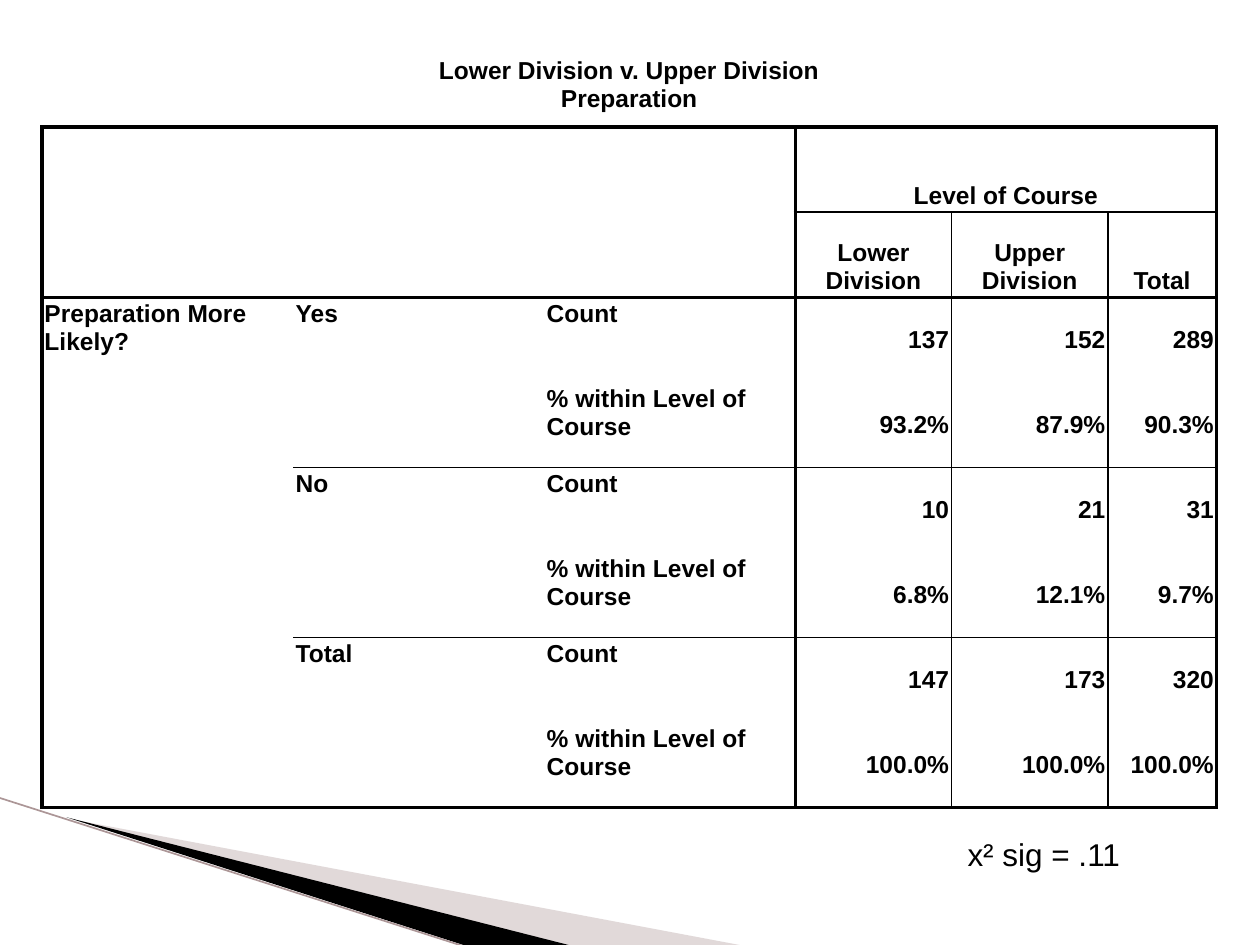
from dataclasses import dataclass

import pptx
import pptx.dml.color
import pptx.enum.shapes
import pptx.enum.text
import pptx.oxml
import pptx.oxml.ns
import pptx.util
from lxml import etree

Pt = pptx.util.Pt
RGBColor = pptx.dml.color.RGBColor
ALIGN = pptx.enum.text.PP_ALIGN
ANCHOR = pptx.enum.text.MSO_ANCHOR
qn = pptx.oxml.ns.qn

BLACK = RGBColor(0x00, 0x00, 0x00)
WHITE = RGBColor(0xFF, 0xFF, 0xFF)
MAUVE = RGBColor(0xB4, 0xA0, 0xA1)
ROSE = RGBColor(0xAC, 0x96, 0x97)

FONT = "Arial"
NO_STYLE_NO_GRID = "{2D5ABB26-0587-4C30-8999-92F81FD0307C}"
COLUMN_WIDTHS = [143.5, 143.5, 143.5, 89.3, 89.3, 62]
ROW_COUNT, ROW_HEIGHT = 9, 48.64
CELL_MARGIN = 1.44
THICK, THIN = 2.25, 1


@dataclass
class Band:
    points: list[tuple[float, float]]
    color: RGBColor
    opacity: int = 100


@dataclass
class Answer:
    label: str
    counts: list[str]
    shares: list[str]


@dataclass
class Entry:
    row: int
    column: int
    text: str
    align: ALIGN = ALIGN.LEFT
    anchor: ANCHOR = ANCHOR.TOP
    row_span: int = 1
    column_span: int = 1


BANDS = [
    Band([(39.6, 468.5), (428.4, 540.7), (328.3, 540.7)], MAUVE, 40),
    Band([(38.2, 467.3), (329, 540.7), (267.8, 541.4)], BLACK),
]
ANSWERS = [
    Answer("Yes", ["137", "152", "289"], ["93.2%", "87.9%", "90.3%"]),
    Answer("No", ["10", "21", "31"], ["6.8%", "12.1%", "9.7%"]),
    Answer("Total", ["147", "173", "320"], ["100.0%", "100.0%", "100.0%"]),
]


def write_text(frame, text, *, size=14, bold=False, align=ALIGN.LEFT, line_spacing=None):
    """Write one paragraph for each line of text."""
    for index, line in enumerate(text.split("\n")):
        paragraph = frame.add_paragraph() if index else frame.paragraphs[0]
        paragraph.alignment = align
        if line_spacing:
            paragraph.line_spacing = Pt(line_spacing)
        run = paragraph.add_run()
        run.text = line
        run.font.name, run.font.size, run.font.bold = FONT, Pt(size), bold
        run.font.color.rgb = BLACK


def draw_band(slide, band: Band) -> None:
    builder = slide.shapes.build_freeform(*band.points[0], scale=float(Pt(1)))
    builder.add_line_segments(band.points[1:], close=True)
    shape = builder.convert_to_shape()
    shape.shadow.inherit = False
    shape.line.fill.background()
    shape.fill.solid()
    shape.fill.fore_color.rgb = band.color
    if band.opacity < 100:
        color = shape.fill._xPr.find(".//" + qn("a:srgbClr"))
        etree.SubElement(color, qn("a:alpha"), val=str(band.opacity * 1000))


def draw_edge_line(slide) -> None:
    edge = slide.shapes.add_connector(
        pptx.enum.shapes.MSO_CONNECTOR.STRAIGHT, Pt(-0.7), Pt(455.8), Pt(267.1), Pt(541.4))
    edge.line.color.rgb = ROSE
    edge.line.width = Pt(0.95)
    etree.SubElement(edge._element.spPr, qn("a:effectLst"))


def rule_above(row: int, column: int) -> float:
    """Weight of the horizontal rule on top of a cell; 0 for none."""
    if row in (1, 3, ROW_COUNT):
        return THICK
    if (row == 2 and column >= 3) or (row in (5, 7) and column >= 1):
        return THIN
    return 0


def rule_before(row: int, column: int) -> float:
    """Weight of the vertical rule left of a cell; 0 for none."""
    if row == 0:
        return 0
    if column in (0, 3, 6):
        return THICK
    return THIN if row >= 2 and column in (4, 5) else 0


def add_borders(cell, row: int, column: int) -> None:
    weights = {
        "L": rule_before(row, column),
        "R": rule_before(row, column + (cell.span_width if cell.is_merge_origin else 1)),
        "T": rule_above(row, column),
        "B": rule_above(row + (cell.span_height if cell.is_merge_origin else 1), column),
    }
    properties = cell._tc.get_or_add_tcPr()
    for side, weight in weights.items():
        border = etree.SubElement(properties, qn(f"a:ln{side}"), w=str(Pt(weight)))
        if weight:
            fill = etree.SubElement(border, qn("a:solidFill"))
            etree.SubElement(fill, qn("a:srgbClr"), val=str(BLACK))
        else:
            etree.SubElement(border, qn("a:noFill"))


def table_entries() -> list[Entry]:
    center, bottom = ALIGN.CENTER, ANCHOR.BOTTOM
    entries = [
        Entry(0, 0, "Lower Division v. Upper Division\nPreparation", center,
              ANCHOR.MIDDLE, column_span=6),
        Entry(1, 3, "Level of Course", center, bottom, column_span=3),
        Entry(3, 0, "Preparation More Likely?", row_span=6),
    ]
    for column, level in enumerate(["Lower Division", "Upper Division", "Total"], start=3):
        entries.append(Entry(2, column, level, center, bottom))
    for index, answer in enumerate(ANSWERS):
        first_row = 3 + 2 * index
        entries.append(Entry(first_row, 1, answer.label, row_span=2))
        measures = [("Count", answer.counts), ("% within Level of Course", answer.shares)]
        for row, (measure, values) in enumerate(measures, start=first_row):
            entries.append(Entry(row, 2, measure))
            for column, value in enumerate(values, start=3):
                entries.append(Entry(row, column, value, ALIGN.RIGHT, ANCHOR.MIDDLE))
    return entries


def draw_crosstab(slide) -> None:
    frame = slide.shapes.add_table(
        ROW_COUNT, len(COLUMN_WIDTHS), Pt(24), Pt(24),
        Pt(sum(COLUMN_WIDTHS)), Pt(ROW_COUNT * ROW_HEIGHT))
    crosstab = frame.table
    crosstab.first_row = crosstab.horz_banding = False
    crosstab._tbl.tblPr.find(qn("a:tableStyleId")).text = NO_STYLE_NO_GRID
    for column, width in zip(crosstab.columns, COLUMN_WIDTHS):
        column.width = Pt(width)
    for row in crosstab.rows:
        row.height = Pt(ROW_HEIGHT)

    # Wording and merged cells
    for entry in table_entries():
        cell = crosstab.cell(entry.row, entry.column)
        if entry.row_span > 1 or entry.column_span > 1:
            cell.merge(crosstab.cell(entry.row + entry.row_span - 1,
                                     entry.column + entry.column_span - 1))
        cell.margin_left = cell.margin_right = Pt(CELL_MARGIN)
        cell.margin_top = cell.margin_bottom = Pt(CELL_MARGIN)
        cell.vertical_anchor = entry.anchor
        write_text(cell.text_frame, entry.text, bold=True, align=entry.align, line_spacing=16)

    # Rules and fills
    for row in range(ROW_COUNT):
        for column in range(len(COLUMN_WIDTHS)):
            cell = crosstab.cell(row, column)
            add_borders(cell, row, column)
            cell.fill.solid()
            cell.fill.fore_color.rgb = WHITE


def main() -> None:
    deck = pptx.Presentation()
    deck.slide_width, deck.slide_height = Pt(720), Pt(540)
    slide = deck.slides.add_slide(deck.slide_layouts[6])

    # Corner decoration
    for band in BANDS:
        draw_band(slide, band)
    draw_edge_line(slide)

    # Significance note
    significance = slide.shapes.add_textbox(Pt(545.8), Pt(473.8), Pt(156.2), Pt(30.2))
    significance.text_frame.word_wrap = True
    write_text(significance.text_frame, "x² sig = .11", size=18)

    draw_crosstab(slide)
    deck.save("out.pptx")


if __name__ == "__main__":
    main()
